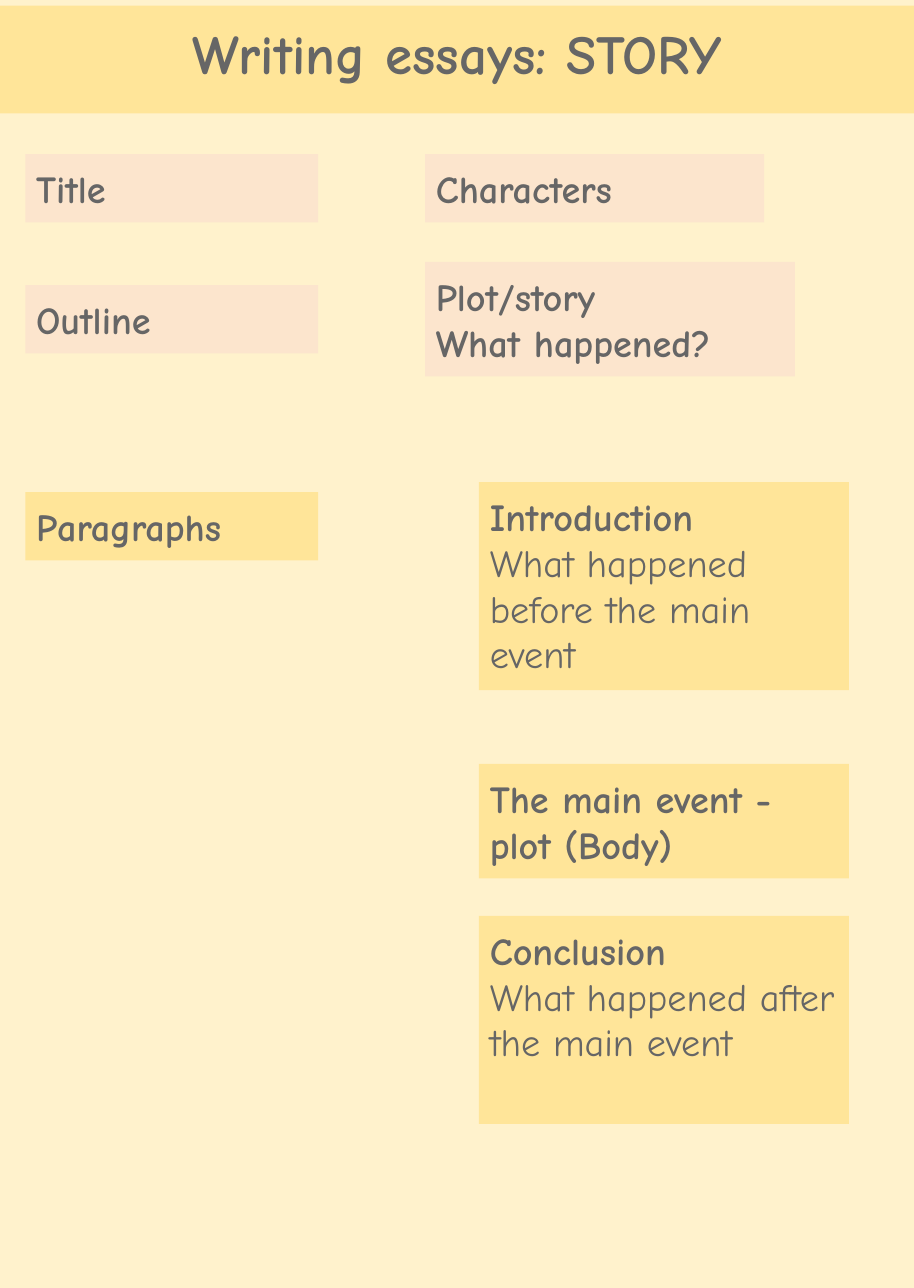
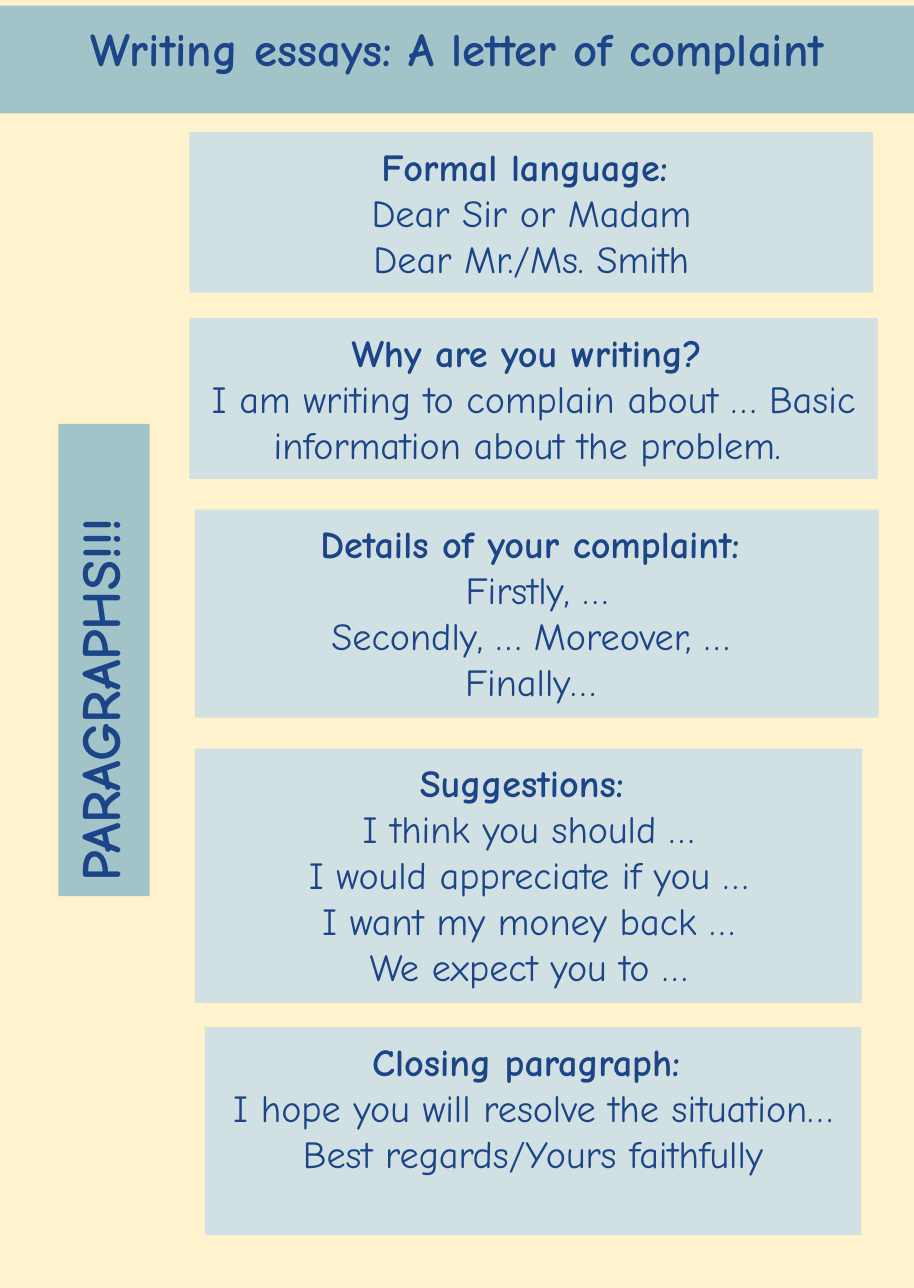
import dataclasses

import pptx
import pptx.dml.color
import pptx.enum.shapes
import pptx.enum.text
import pptx.util

RGBColor = pptx.dml.color.RGBColor
Align = pptx.enum.text.PP_ALIGN

PX = 9144  # one hundredth of an inch
FONT = "Comic Neue"
BODY_SIZE = 25
LABEL_SIZE = 36
BOX_INSET = 10
BAND_INSET = 13

CREAM = RGBColor(0xFF, 0xF2, 0xCC)
YELLOW = RGBColor(0xFF, 0xE5, 0x99)
PEACH = RGBColor(0xFC, 0xE5, 0xCD)
GREY = RGBColor(0x66, 0x66, 0x66)
TEAL = RGBColor(0xA2, 0xC4, 0xC9)
PALE_TEAL = RGBColor(0xD0, 0xE0, 0xE3)
NAVY = RGBColor(0x1C, 0x45, 0x87)


@dataclasses.dataclass
class Style:
    band: RGBColor
    ink: RGBColor
    align: Align


STORY = Style(YELLOW, GREY, Align.LEFT)
LETTER = Style(TEAL, NAVY, Align.CENTER)

# left, top, width, height, fill, bold lines, plain lines
STORY_BOXES = [
    (23, 140, 266, 62, PEACH, ["Title"], []),
    (23, 259, 266, 62, PEACH, ["Outline"], []),
    (386, 140, 308, 62, PEACH, ["Characters"], []),
    (386, 238, 336, 104, PEACH, ["Plot/story", "What happened?"], []),
    (23, 447, 266, 62, YELLOW, ["Paragraphs"], []),
    (435, 438, 336, 189, YELLOW, ["Introduction"],
     ["What happened before the main event"]),
    (435, 694, 336, 104, YELLOW, ["The main event - plot (Body)"], []),
    (435, 832, 336, 189, YELLOW, ["Conclusion"],
     ["What happened after the main event"]),
]

LETTER_BOXES = [
    (172, 120, 621, 146, PALE_TEAL, ["Formal language: "],
     ["Dear Sir or Madam", "Dear Mr./Ms. Smith"]),
    (172, 289, 625, 146, PALE_TEAL, ["Why are you writing? "],
     ["I am writing to complain about … Basic information about the problem. "]),
    (177, 463, 621, 189, PALE_TEAL, ["Details of your complaint: "],
     ["Firstly, …", "Secondly, … Moreover, … ", "Finally… "]),
    (177, 680, 606, 231, PALE_TEAL, ["Suggestions: "],
     ["I think you should …", "I would appreciate if you …",
      "I want my money back …", "We expect you to …"]),
    (186, 933, 596, 189, PALE_TEAL, ["Closing paragraph: "],
     ["I hope you will resolve the situation…",
      "Best regards/Yours faithfully"]),
]


def px(length):
    return pptx.util.Emu(length * PX)


def fill_solid(shape, color):
    shape.fill.solid()
    shape.fill.fore_color.rgb = color
    shape.line.fill.background()


def write(shape, lines, size, color, align, inset):
    """Fill a shape with (text, bold) lines, one paragraph each."""
    frame = shape.text_frame
    frame.word_wrap = True
    frame.auto_size = pptx.enum.text.MSO_AUTO_SIZE.NONE
    frame.vertical_anchor = pptx.enum.text.MSO_ANCHOR.TOP
    frame.margin_left = frame.margin_right = px(inset)
    frame.margin_top = frame.margin_bottom = px(inset)
    for index, (text, bold) in enumerate(lines):
        paragraph = frame.add_paragraph() if index else frame.paragraphs[0]
        paragraph.alignment = align
        run = paragraph.add_run()
        run.text = text
        run.font.name = FONT
        run.font.size = pptx.util.Pt(size)
        run.font.bold = bold
        run.font.color.rgb = color


def add_rectangle(slide, left, top, width, height, fill):
    shape = slide.shapes.add_shape(
        pptx.enum.shapes.MSO_SHAPE.RECTANGLE,
        px(left), px(top), px(width), px(height))
    shape.shadow.inherit = False
    fill_solid(shape, fill)
    return shape


def add_titled_slide(presentation, title, size, style):
    slide = presentation.slides.add_slide(
        presentation.slide_layouts.get_by_name("Title Only"))
    band = slide.shapes.title
    band.left, band.top = px(0), px(5)
    band.width, band.height = presentation.slide_width, px(98)
    fill_solid(band, style.band)
    write(band, [(title, True)], size, style.ink, Align.CENTER, BAND_INSET)
    return slide


def add_boxes(slide, boxes, style):
    for left, top, width, height, fill, headings, details in boxes:
        box = add_rectangle(slide, left, top, width, height, fill)
        lines = [(text, True) for text in headings]
        lines += [(text, False) for text in details]
        write(box, lines, BODY_SIZE, style.ink, style.align, BOX_INSET)


def add_side_label(slide, text, style):
    """Add a band that reads from bottom to top."""
    label = add_rectangle(slide, -120, 558, 429, 83, style.band)
    label.rotation = 270
    write(label, [(text, True)], LABEL_SIZE, style.ink, Align.LEFT, BAND_INSET)
    label.text_frame.paragraphs[0].line_spacing = 0.9


def main():
    presentation = pptx.Presentation()
    presentation.slide_width = px(830)
    presentation.slide_height = px(1170)
    background = presentation.slide_master.background.fill
    background.solid()
    background.fore_color.rgb = CREAM

    story = add_titled_slide(presentation, "Writing essays: STORY", 36, STORY)
    add_boxes(story, STORY_BOXES, STORY)

    letter = add_titled_slide(
        presentation, "Writing essays: A letter of complaint", 30.6, LETTER)
    add_boxes(letter, LETTER_BOXES, LETTER)
    add_side_label(letter, "PARAGRAPHS!!!", LETTER)

    presentation.save("out.pptx")


if __name__ == "__main__":
    main()
